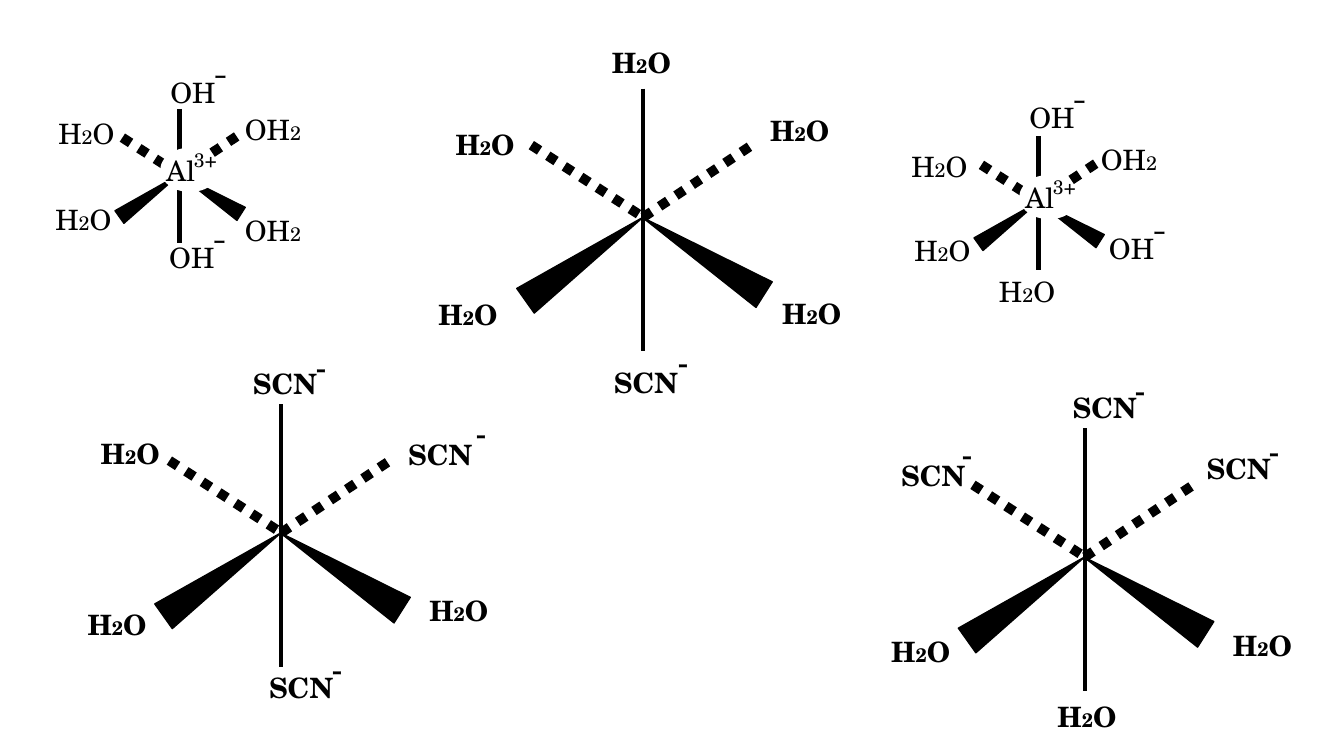
import itertools

import pptx
import pptx.dml.color
import pptx.enum.dml
import pptx.enum.shapes
import pptx.enum.text
import pptx.oxml.ns
import pptx.util
from lxml import etree

THEME = {
    "font": "TeX Gyre Schola",
    "ink": pptx.dml.color.RGBColor(0, 0, 0),
    "paper": pptx.dml.color.RGBColor(255, 255, 255),
    "formula": 20,
    "script": 14,
    "small charge": 18,
    "axis": 3,
    "dots": 7,
    "outline": 1,
}
CELL = pptx.util.Inches(0.1)  # the grid has 133.3 columns and 75 rows
SMALL = 0.51
SHAPE = pptx.enum.shapes.MSO_SHAPE

# Skeleton of a large complex, in cells from the upper end of its axis
BONDS = [
    (0, 0, 0, 26.05, False),
    (0, 12.75, 11.15, 5.35, True),
    (-11.1, 5.6, 0, 12.75, True),
]
WEDGES = [(-7.35, 9.75, 54.6), (4.45, 9.45, 302.4)]
WEDGE_SIZE = (3, 14.3)
SMALL_WIDTHS = {"H2O": 8.6, "OH2": 9.7, "OH": 7.8}

# Axis column, axis row, scale, ligands: (formula, column, row, charge offset)
COMPLEXES = [
    (17.8, 10.8, SMALL, [
        ("OH", 15.9, 7, (4.4, -1.4)), ("OH", 15.8, 23.4, (4.4, -1.4)),
        ("H2O", 4.5, 19.6, None), ("OH2", 23.3, 10.7, None),
        ("H2O", 4.8, 11.1, None), ("OH2", 23.3, 20.7, None)]),
    (63.8, 8.8, 1, [
        ("SCN", 59.9, 35.8, (6.4, -1.2)), ("H2O", 42.5, 29, None),
        ("H2O", 59.7, 4, None), ("H2O", 44.2, 12.2, None),
        ("H2O", 75.4, 10.8, None), ("H2O", 76.6, 28.9, None)]),
    (27.9, 40.1, 1, [
        ("SCN", 24.1, 35.9, (6.3, -0.8)), ("SCN", 25.7, 66, (6.3, -0.9)),
        ("H2O", 41.6, 58.4, None), ("H2O", 7.7, 59.8, None),
        ("H2O", 9, 42.8, None), ("SCN", 39.5, 42.9, (6.8, -1.2))]),
    (107.6, 42.5, 1, [
        ("SCN", 118.7, 44.3, (6.2, -0.9)), ("SCN", 105.4, 38.2, (6.2, -0.8)),
        ("H2O", 103.9, 68.9, None), ("H2O", 121.3, 61.9, None),
        ("H2O", 87.4, 62.5, None), ("SCN", 88.4, 45, (6.1, -1.3))]),
    (103, 13.5, SMALL, [
        ("OH", 101.1, 9.5, (4.4, -1.4)), ("OH", 109, 22.5, (4.4, -1.4)),
        ("H2O", 89.4, 14.3, None), ("H2O", 89.7, 22.7, None),
        ("OH2", 108.2, 13.6, None), ("H2O", 98.1, 26.7, None)]),
]


def add_solid(group, kind, cells, color):
    """Add a filled preset shape whose left, top, width and height are in cells."""
    solid = group.shapes.add_shape(kind, *(int(value * CELL) for value in cells))
    solid.shadow.inherit = False
    solid.fill.solid()
    solid.fill.fore_color.rgb = color
    return solid


def add_label(group, spans, cells, bold):
    """Write (text, size) spans in a box whose left, top, width and height are in cells."""
    box = group.shapes.add_textbox(*(int(value * CELL) for value in cells))
    box.text_frame.word_wrap = True
    box.text_frame.auto_size = pptx.enum.text.MSO_AUTO_SIZE.SHAPE_TO_FIT_TEXT
    para = box.text_frame.paragraphs[0]
    for text, size in spans:
        span = para.add_run()
        span.text = text
        span.font.name = THEME["font"]
        span.font.size = pptx.util.Pt(size)
        span.font.bold = bold
        span.font.color.rgb = THEME["ink"]


deck = pptx.Presentation()
deck.slide_width = int(133.3 * CELL)
deck.slide_height = 75 * CELL
page = deck.slides.add_slide(deck.slide_layouts[6])

for column, row, scale, ligands in COMPLEXES:
    group = page.shapes.add_group_shape()
    large = scale == 1

    for x1, y1, x2, y2, dotted in BONDS:
        ends = (column + x1 * scale, row + y1 * scale,
                column + x2 * scale, row + y2 * scale)
        bond = group.shapes.add_connector(
            pptx.enum.shapes.MSO_CONNECTOR.STRAIGHT,
            *(int(value * CELL) for value in ends))
        bond.line.color.rgb = THEME["ink"]
        bond.line.width = pptx.util.Pt(THEME["dots" if dotted else "axis"])
        if dotted:
            bond.line.dash_style = pptx.enum.dml.MSO_LINE.ROUND_DOT
        etree.SubElement(bond._element.spPr, pptx.oxml.ns.qn("a:effectLst"))

    for x, y, angle in WEDGES:
        wedge = add_solid(
            group, SHAPE.ISOSCELES_TRIANGLE,
            (column + x * scale, row + y * scale,
             *(side * scale for side in WEDGE_SIZE)), THEME["ink"])
        wedge.rotation = angle
        wedge.line.color.rgb = THEME["ink"]
        wedge.line.width = pptx.util.Pt(THEME["outline"])

    if not large:
        center = add_solid(group, SHAPE.OVAL,
                           (column - 1.9, row + 3.85, 5.9, 4.4), THEME["paper"])
        center.line.fill.background()
        add_label(group, [("Al", THEME["formula"])],
                  (column - 2.3, row + 3.9, 10.3, 4.4), False)
        add_label(group, [("3+", THEME["script"])],
                  (column + 0.45, row + 3.35, 5.2, 3.4), False)

    for formula, left, top, charge in ligands:
        spans = [("".join(part), THEME["script" if digit else "formula"])
                 for digit, part in itertools.groupby(formula, str.isdigit)]
        width = 10 if large else SMALL_WIDTHS[formula]
        add_label(group, spans, (left, top, width, 4.4), large)
        if charge:
            size = THEME["script" if large else "small charge"]
            charge_box = (4.5, 3.4) if large else (4, 4)
            add_label(group, [("ｰ", size)],
                      (left + charge[0], top + charge[1], *charge_box), large)

deck.save("out.pptx")
